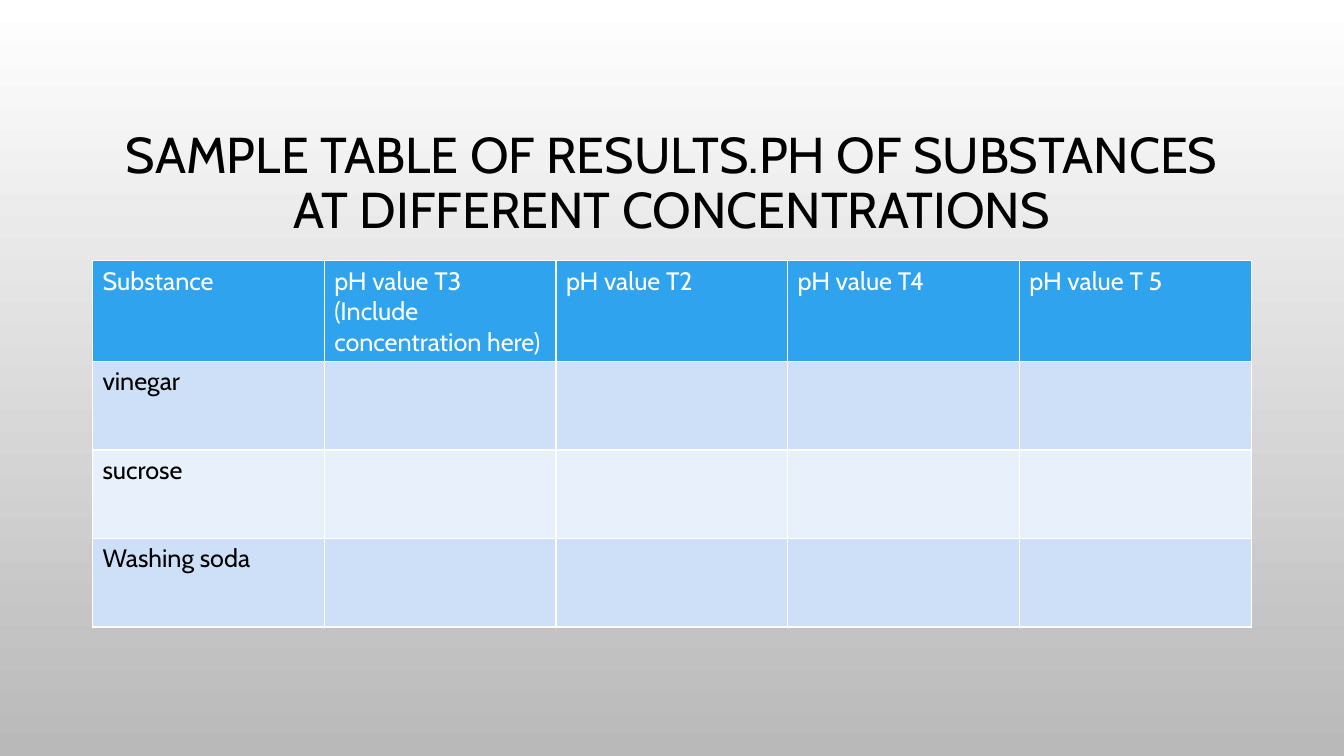
from lxml.etree import SubElement
from pptx import Presentation
from pptx.dml.color import RGBColor as RGB
from pptx.enum.text import MSO_ANCHOR as ANCHOR, PP_ALIGN as ALIGN
from pptx.oxml.ns import qn
from pptx.util import Cm, Pt

COLORS = {
    "top": "FFFFFF", "bottom": "B9B9B9", "header": "2FA3EE",
    "odd": "CDE0F8", "even": "E8F0FC", "ink": "000000", "white": "FFFFFF",
}
TITLE = "SAMPLE TABLE OF RESULTS.PH OF SUBSTANCES AT DIFFERENT CONCENTRATIONS"
HEADINGS = ["Substance", "pH value T3\n(Include concentration here)",
            "pH value T2", "pH value T4", "pH value T 5"]
SUBSTANCES = ["vinegar", "sucrose", "Washing soda"]


class ResultsSlide:
    font = "Cabin"

    def __init__(self, deck):
        self.slide = deck.slides.add_slide(deck.slide_layouts[6])

    def background(self, top, bottom):
        fill = self.slide.background.fill
        fill.gradient()
        fill.gradient_angle = 270
        for stop, color in zip(fill.gradient_stops, (top, bottom)):
            stop.color.rgb = RGB.from_string(COLORS[color])

    def style(self, paragraph, size, color):
        for run in paragraph.runs:
            for key, value in {"name": self.font, "size": Pt(size), "bold": False}.items():
                setattr(run.font, key, value)
            run.font.color.rgb = RGB.from_string(COLORS[color])

    def title(self, text, left, top, width, height):
        frame = self.slide.shapes.add_textbox(
            Cm(left), Cm(top), Cm(width), Cm(height)).text_frame
        for key, value in {"word_wrap": True, "vertical_anchor": ANCHOR.MIDDLE}.items():
            setattr(frame, key, value)
        heading = frame.paragraphs[0]
        heading.text = text
        for key, value in {"alignment": ALIGN.CENTER, "line_spacing": 0.9}.items():
            setattr(heading, key, value)
        self.style(heading, 36, "ink")

    def table(self, rows, left, top, column_width, row_height):
        count = len(rows[0])
        results = self.slide.shapes.add_table(
            len(rows), count, Cm(left), Cm(top),
            Cm(column_width * count), Cm(row_height * len(rows))).table
        for column in results.columns:
            column.width = Cm(column_width)
        for index, texts in enumerate(rows):
            results.rows[index].height = Cm(row_height)
            fill = "header" if index == 0 else "odd" if index % 2 else "even"
            ink = "ink" if index else "white"
            for cell, text in zip(results.rows[index].cells, texts):
                self.cell(cell, text, fill, ink)

    def cell(self, cell, text, fill, ink):
        cell.text = text
        for paragraph in cell.text_frame.paragraphs:
            self.style(paragraph, 18, ink)
        # Borders come before the fill in the cell properties
        properties = cell._tc.get_or_add_tcPr()
        for side in ("a:lnL", "a:lnR", "a:lnT", "a:lnB"):
            border = SubElement(properties, qn(side), w=str(Pt(1)))
            solid = SubElement(border, qn("a:solidFill"))
            SubElement(solid, qn("a:srgbClr"), val=COLORS["white"])
        cell.fill.solid()
        cell.fill.fore_color.rgb = RGB.from_string(COLORS[fill])


def main():
    deck = Presentation()
    deck.slide_width, deck.slide_height = Cm(33.87), Cm(19.05)
    page = ResultsSlide(deck)
    page.background("top", "bottom")

    # Title
    page.title(TITLE, 2.54, 2.44, 28.78, 4.44)

    # Results, with the pH values left open
    blanks = [""] * (len(HEADINGS) - 1)
    rows = [HEADINGS] + [[substance] + blanks for substance in SUBSTANCES]
    page.table(rows, 2.33, 6.57, 5.84, 2.23)

    deck.save("out.pptx")


if __name__ == "__main__":
    main()
